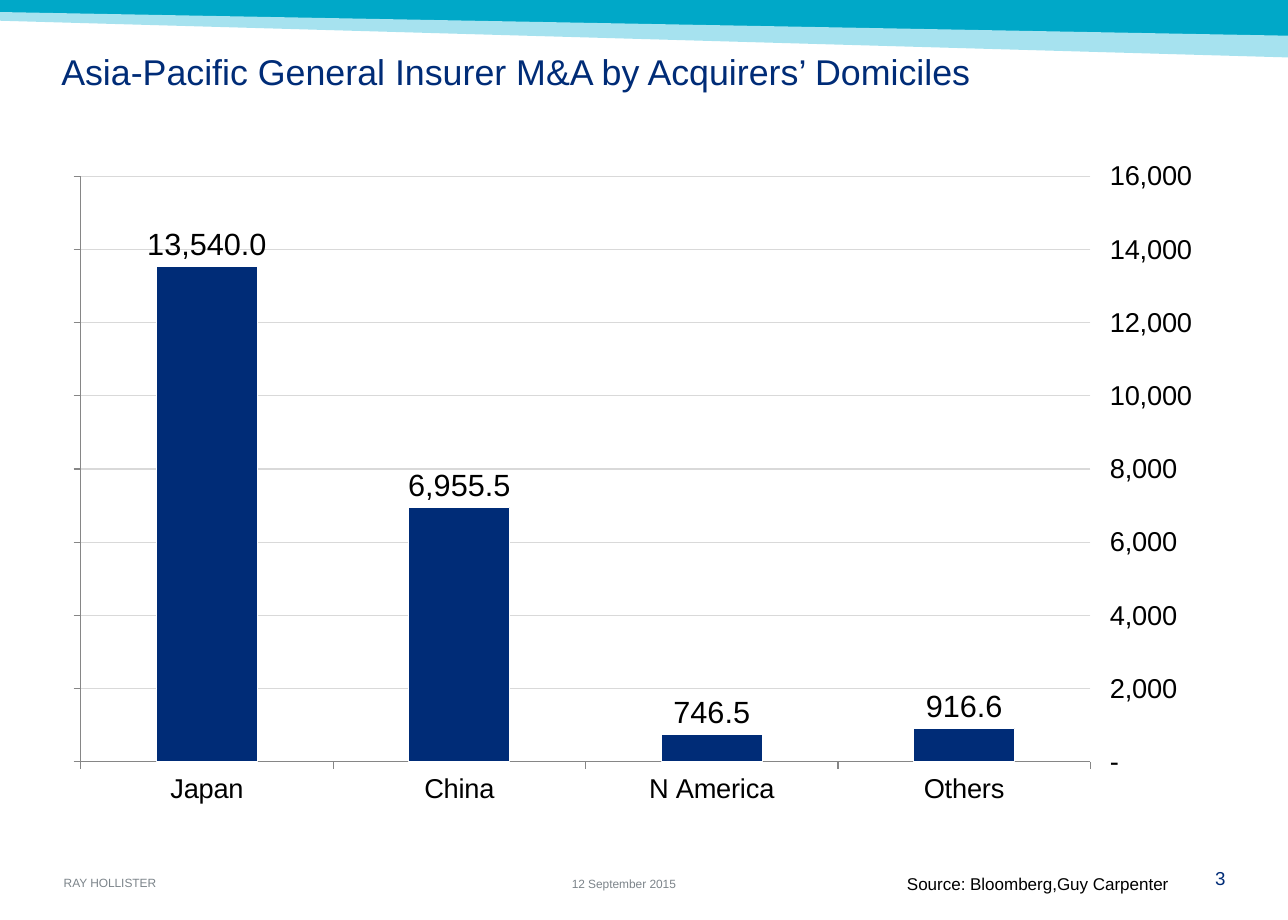
"""Build the slide on Asia-Pacific insurer acquisitions by acquirers' domicile."""
from pptx import Presentation
from pptx import util as u
from pptx.chart import data as chart_data
from pptx.dml.color import RGBColor
from pptx.enum import chart as ch, text
from pptx.oxml import ns

NAVY = RGBColor(0x00, 0x2C, 0x77)
TEAL = RGBColor(0x00, 0xA8, 0xC8)
PALE = RGBColor(0xA6, 0xE2, 0xEF)
GREY = RGBColor(0x7C, 0x84, 0x8A)
AXIS = RGBColor(0x86, 0x86, 0x86)
GRID = RGBColor(0xD9, 0xD9, 0xD9)
WHITE = RGBColor(0xFF, 0xFF, 0xFF)
BLACK = RGBColor(0, 0, 0)
FONT = "Arial"
LEFT, RIGHT = text.PP_ALIGN.LEFT, text.PP_ALIGN.RIGHT
TOP, BOTTOM = text.MSO_ANCHOR.TOP, text.MSO_ANCHOR.BOTTOM


def set_font(font, size, color):
    for name, value in {"name": FONT, "size": u.Pt(size), "bold": False}.items():
        setattr(font, name, value)
    font.color.rgb = color


deck = Presentation()
deck.slide_width, deck.slide_height = u.Cm(26.67), u.Cm(19.05)
page = deck.slides.add_slide(deck.slide_layouts[6])

bands = [
    (TEAL, [(0, 0), (26.67, 0), (26.67, 0.81), (0, 0.3)]),
    (PALE, [(0, 0.25), (26.67, 0.74), (26.67, 1.19), (0, 0.43)]),
]
for color, corners in bands:
    points = [(u.Cm(x), u.Cm(y)) for x, y in corners]
    outline = page.shapes.build_freeform(*points[0])
    outline.add_line_segments(points[1:], close=True)
    band = outline.convert_to_shape()
    band.shadow.inherit = False
    band.fill.solid()
    band.fill.fore_color.rgb = color
    band.line.fill.background()

labels = [
    ("Asia-Pacific General Insurer M&A by Acquirers’ Domiciles",
     (1.27, 1.05, 24.13, 1.93), 21, NAVY, LEFT, TOP, 0.83, (0, 0.13, 0.25, 0.13)),
    ("RAY HOLLISTER", (1.32, 18.14, 8.03, 0.28), 7, GREY, LEFT, BOTTOM, 1, (0, 0, 0, 0)),
    ("12 September 2015", (11.84, 18.14, 3, 0.3), 7, GREY, LEFT, BOTTOM, 1, (0, 0, 0, 0)),
    ("Source: Bloomberg,Guy Carpenter",
     (17.68, 18.01, 6.76, 0.64), 10, BLACK, RIGHT, TOP, 0.86, (0.25, 0.13, 0.25, 0.13)),
    ("3", (24.14, 17.95, 1.24, 0.46), 11, NAVY, RIGHT, TOP, 1, (0, 0, 0, 0)),
]
for words, place, size, color, align, anchor, spacing, insets in labels:
    box = page.shapes.add_textbox(*map(u.Cm, place))
    frame = box.text_frame
    left, top, right, bottom = map(u.Cm, insets)
    layout = {"word_wrap": True, "vertical_anchor": anchor, "margin_left": left,
              "margin_top": top, "margin_right": right, "margin_bottom": bottom}
    for name, value in layout.items():
        setattr(frame, name, value)
    para = frame.paragraphs[0]
    para.alignment, para.line_spacing = align, spacing
    span = para.add_run()
    span.text = words
    set_font(span.font, size, color)

deals = chart_data.CategoryChartData()
deals.categories = ["Japan", "China", "N America", "Others"]
deals.add_series("Series 1", (13540, 6955.5, 746.5, 916.6))
chart = page.shapes.add_chart(
    ch.XL_CHART_TYPE.COLUMN_CLUSTERED,
    u.Cm(1.19), u.Cm(3.07), u.Cm(24.13), u.Cm(13.84), deals).chart
chart.has_legend = chart.has_title = False
set_font(chart.font, 10, BLACK)

plot = chart.plots[0]
plot.gap_width, plot.vary_by_categories = 150, False
columns = plot.series[0]
columns.format.fill.solid()
columns.format.fill.fore_color.rgb = NAVY
columns.format.line.color.rgb = WHITE
columns.format.line.width = u.Pt(0.75)
values = columns.data_labels
values.show_value = True
values.number_format, values.number_format_is_linked = "#,##0.0", False
values.position = ch.XL_LABEL_POSITION.OUTSIDE_END
set_font(values.font, 18, BLACK)

for axis in (chart.category_axis, chart.value_axis):
    axis.major_tick_mark = ch.XL_TICK_MARK.OUTSIDE
    axis.minor_tick_mark = ch.XL_TICK_MARK.NONE
    axis.format.line.color.rgb = AXIS
    axis.format.line.width = u.Pt(0.75)
    set_font(axis.tick_labels.font, 16, BLACK)

chart.category_axis.crosses = ch.XL_AXIS_CROSSES.MAXIMUM
scale = chart.value_axis
chart.element.find(".//" + ns.qn("c:valAx")).find(ns.qn("c:axPos")).set("val", "r")
scale.tick_label_position = ch.XL_TICK_LABEL_POSITION.HIGH
scale.minimum_scale, scale.maximum_scale, scale.major_unit = 0, 16000, 2000
scale.tick_labels.number_format = '_(* #,##0_);_(* \\(#,##0\\);_(* "-"_);_(@_)'
scale.tick_labels.number_format_is_linked = False
scale.has_major_gridlines = True
scale.major_gridlines.format.line.color.rgb = GRID
scale.major_gridlines.format.line.width = u.Pt(0.75)

deck.save("out.pptx")
